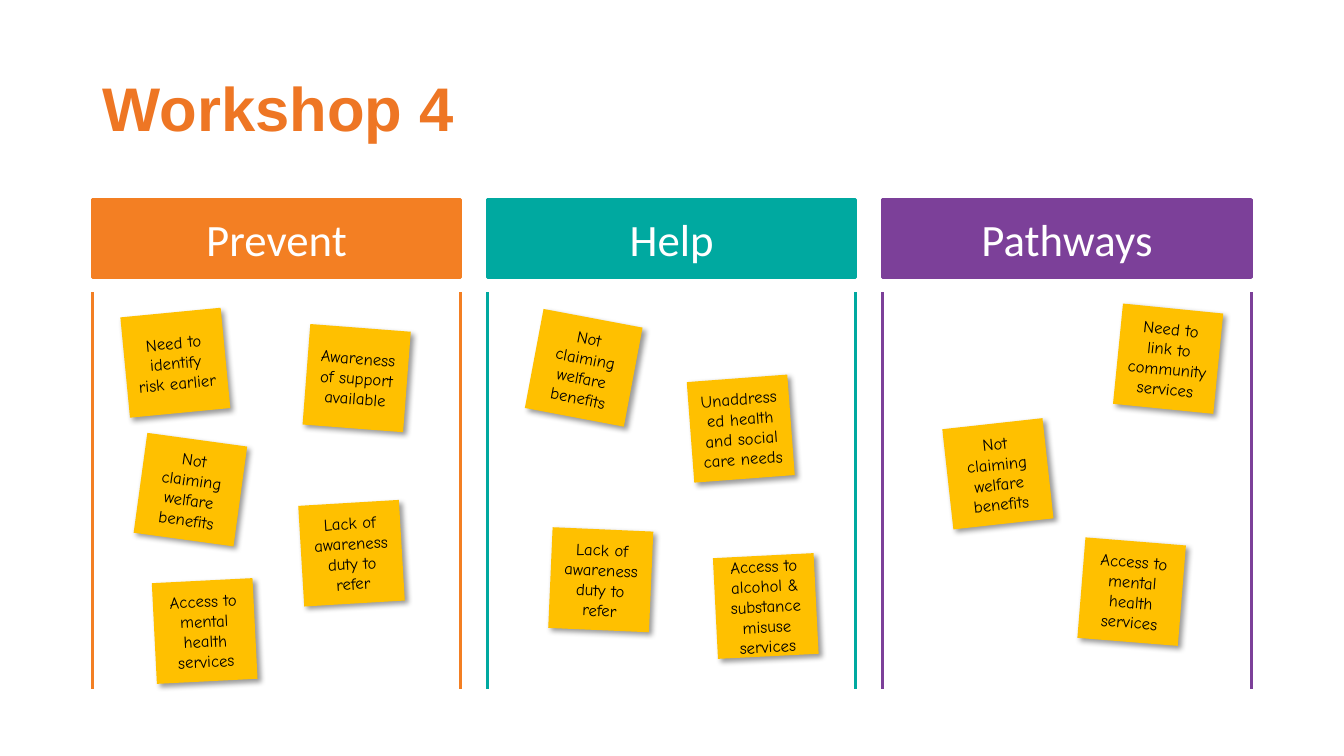
from dataclasses import dataclass

from lxml import etree
from pptx import Presentation
from pptx import util as u
from pptx.dml.color import RGBColor
from pptx.enum import shapes, text
from pptx.oxml import ns


@dataclass(frozen=True)
class Theme:
    orange: str = "F37F23"
    teal: str = "00A9A0"
    purple: str = "7C4099"
    title: tuple = ("Arial", 44, "EE7624", True)
    header: tuple = ("Calibri", 32, "FFFFFF", False)
    note: tuple = ("Comic Neue", 12, "000000", False)
    note_fill: str = "FFC000"
    shadow: str = "000000"
    rule: float = 2.25


class Board:
    def __init__(self, slide, theme):
        self.slide, self.theme = slide, theme

    def label(self, shape, wording, style, align):
        frame = shape.text_frame
        frame_format = {
            "text": wording,
            "word_wrap": True,
            "auto_size": text.MSO_AUTO_SIZE.NONE,
            "vertical_anchor": text.MSO_ANCHOR.MIDDLE,
        }
        for name, value in frame_format.items():
            setattr(frame, name, value)
        paragraph = frame.paragraphs[0]
        paragraph.alignment = align
        face, size, colour, bold = style
        font = paragraph.runs[0].font
        for name, value in {"name": face, "size": u.Pt(size), "bold": bold}.items():
            setattr(font, name, value)
        font.color.rgb = RGBColor.from_string(colour)
        return paragraph

    def outline(self, item, colour):
        item.line.color.rgb = RGBColor.from_string(colour)
        item.line.width = u.Pt(self.theme.rule)

    def title(self, wording, left, top, width, height):
        heading = self.slide.shapes.title
        place = {"left": left, "top": top, "width": width, "height": height}
        for name, value in place.items():
            setattr(heading, name, u.Cm(value))
        paragraph = self.label(heading, wording, self.theme.title, text.PP_ALIGN.LEFT)
        paragraph.line_spacing = 0.9

    def box(self, wording, left, top, width, height, fill, style):
        shape = self.slide.shapes.add_shape(
            shapes.MSO_SHAPE.RECTANGLE, *map(u.Cm, (left, top, width, height)))
        shape.shadow.inherit = False
        shape.fill.solid()
        shape.fill.fore_color.rgb = RGBColor.from_string(fill)
        self.label(shape, wording, style, text.PP_ALIGN.CENTER)
        return shape

    def header(self, wording, left, top, width, height, colour):
        banner = self.box(wording, left, top, width, height, colour, self.theme.header)
        self.outline(banner, colour)

    def side(self, x, top, bottom, colour):
        edge = self.slide.shapes.add_connector(
            shapes.MSO_CONNECTOR.STRAIGHT, *map(u.Cm, (x, top, x, bottom)))
        self.outline(edge, colour)
        etree.SubElement(edge._element.spPr, ns.qn("a:effectLst"))

    def sticky(self, wording, left, top, turn):
        size = 2.54
        sticky = self.box(wording, left, top, size, size,
                          self.theme.note_fill, self.theme.note)
        sticky.line.fill.background()
        sticky.rotation = turn
        # Soft shadow towards the lower right
        effects = sticky._element.spPr.find(ns.qn("a:effectLst"))
        shadow = etree.SubElement(
            effects, ns.qn("a:outerShdw"), blurRad=str(u.Pt(4)), dist=str(u.Pt(3)),
            dir=str(45 * 60000), algn="tl", rotWithShape="0")
        colour = etree.SubElement(shadow, ns.qn("a:srgbClr"), val=self.theme.shadow)
        etree.SubElement(colour, ns.qn("a:alpha"), val="40000")


def main():
    theme = Theme()
    deck = Presentation()
    deck.slide_width, deck.slide_height = u.Cm(33.87), u.Cm(19.05)
    board = Board(deck.slides.add_slide(deck.slide_layouts[5]), theme)

    # Title
    margin = 2.33
    board.title("Workshop 4", margin, 0.97, 29.21, 3.68)

    # Columns: header with a line down each side
    width, pitch = 9.28, 9.96
    columns = [("Prevent", theme.orange), ("Help", theme.teal), ("Pathways", theme.purple)]
    for index, (stage, colour) in enumerate(columns):
        left = margin + index * pitch
        board.header(stage, left, 5.03, width, 1.96, colour)
        for x in (left, left + width):
            board.side(x, 7.37, 17.35, colour)

    # Sticky notes: wording, left, top, turn in degrees
    welfare = "Not claiming welfare benefits"
    duty = "Lack of awareness duty to refer"
    mental = "Access to mental health services"
    stickies = [
        ("Need to identify risk earlier", 3.15, 7.87, -5.5),
        ("Need to link to community services", 28.17, 7.77, 5.7),
        (welfare, 3.53, 11.07, 7.8),
        (welfare, 23.88, 10.67, -6.3),
        (welfare, 13.44, 8, 10.7),
        ("Unaddressed health and social care needs", 17.4, 9.53, -4.3),
        ("Awareness of support available", 7.72, 8.26, 4.4),
        (duty, 7.59, 12.67, -3.4),
        (duty, 13.87, 13.34, 2.5),
        (mental, 3.89, 14.63, -2.9),
        (mental, 27.25, 13.64, 4.6),
        ("Access to alcohol & substance misuse services", 18.03, 14, -2.9),
    ]
    for sticky in stickies:
        board.sticky(*sticky)

    deck.save("out.pptx")


if __name__ == "__main__":
    main()
